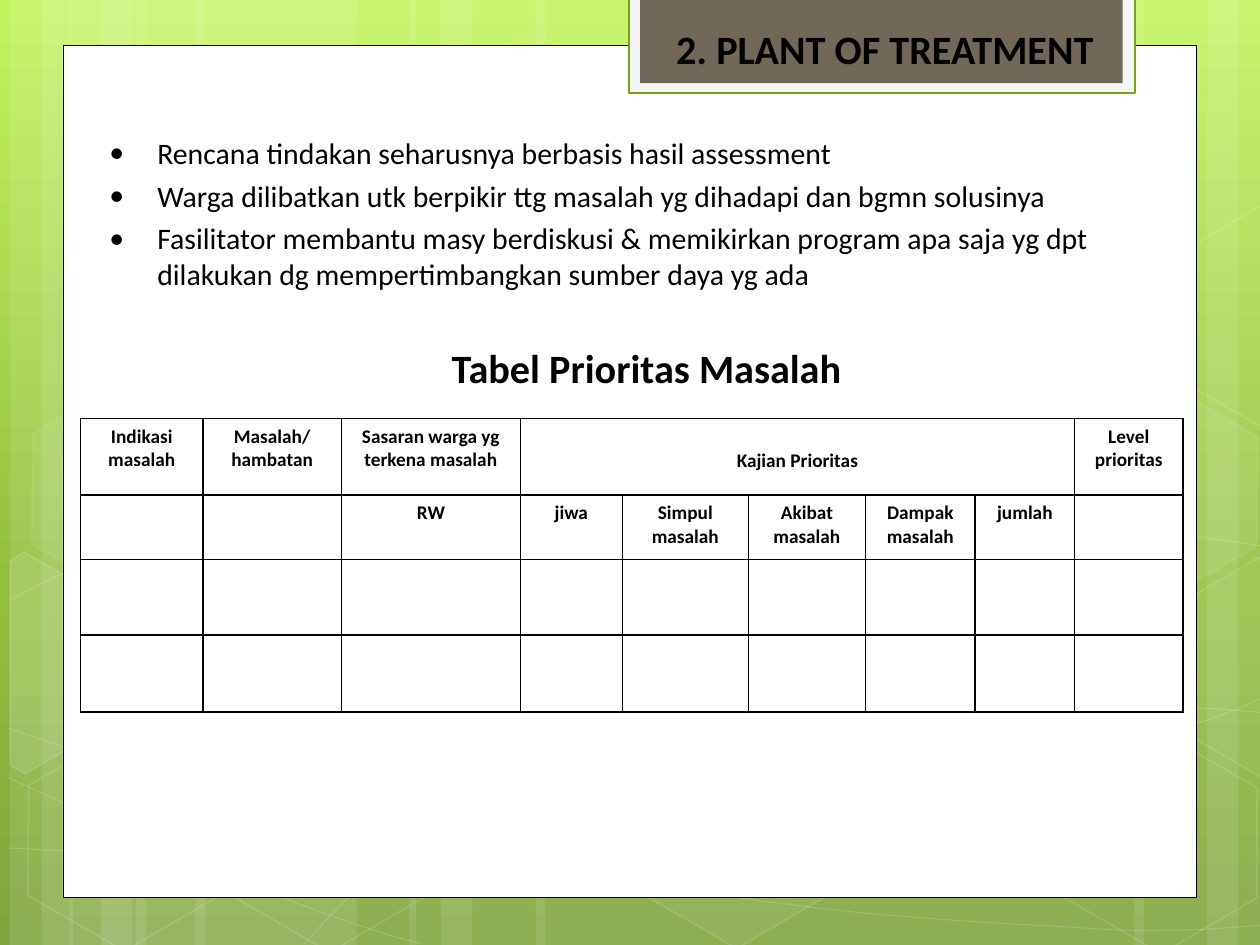
import copy
import math

import pptx
import pptx.dml.color
import pptx.enum.shapes
import pptx.enum.text
import pptx.oxml
import pptx.oxml.ns
import pptx.util
from pptx.util import Inches

RGBColor = pptx.dml.color.RGBColor
SHAPE = pptx.enum.shapes.MSO_SHAPE
CENTER = pptx.enum.text.PP_ALIGN.CENTER
LEFT = pptx.enum.text.PP_ALIGN.LEFT
qn = pptx.oxml.ns.qn

WHITE = RGBColor(0xFF, 0xFF, 0xFF)
BLACK = RGBColor(0x00, 0x00, 0x00)
TAB_BACK = RGBColor(0xF5, 0xF5, 0xF5)
TAB_LINE = RGBColor(0x74, 0xA5, 0x10)
TAB_FILL = RGBColor(0x71, 0x68, 0x5A)
GRADIENT = [(0, RGBColor(0xC3, 0xF3, 0x5F)), (0.62, RGBColor(0x93, 0xBF, 0x3F)),
            (1, RGBColor(0x81, 0xA5, 0x3E))]
TILT = 30


def untilt(point, center):
    """The point before a clockwise turn by TILT about the center."""
    angle = math.radians(TILT)
    dx, dy = point[0] - center[0], point[1] - center[1]
    return (center[0] + dx * math.cos(angle) + dy * math.sin(angle),
            center[1] - dx * math.sin(angle) + dy * math.cos(angle))


class SlideBuilder:
    font = "Calibri"

    def __init__(self, s):
        self.s = s

    def background(self, stops):
        fill = self.s.background.fill
        fill.gradient()
        fill.gradient_angle = 270
        gs_list = self.s.element.find(".//" + qn("a:gsLst"))
        gs_list.insert(1, copy.deepcopy(gs_list[0]))
        for stop, (position, color) in zip(fill.gradient_stops, stops):
            stop.position = position
            stop.color.rgb = color

    def opacity(self, sp, route, percent):
        color = sp.element.spPr.find("/".join(qn(tag) for tag in route))
        color.append(color.makeelement(qn("a:alpha"), {"val": str(percent * 1000)}))

    def paint(self, sp, fill=None, line=None, width=1, fill_alpha=100, line_alpha=100):
        sp.shadow.inherit = False
        if fill is None:
            sp.fill.background()
        else:
            sp.fill.solid()
            sp.fill.fore_color.rgb = fill
            if fill_alpha < 100:
                self.opacity(sp, ("a:solidFill", "a:srgbClr"), fill_alpha)
        if line is None:
            sp.line.fill.background()
        else:
            sp.line.color.rgb = line
            sp.line.width = pptx.util.Pt(width)
            if line_alpha < 100:
                self.opacity(sp, ("a:ln", "a:solidFill", "a:srgbClr"), line_alpha)

    def rect(self, x, y, w, h, **style):
        sp = self.s.shapes.add_shape(SHAPE.RECTANGLE, Inches(x), Inches(y), Inches(w), Inches(h))
        self.paint(sp, **style)

    def hexagon(self, x, y, fill_alpha, line_alpha):
        sp = self.s.shapes.add_shape(SHAPE.HEXAGON, Inches(x), Inches(y),
                                     Inches(1.75), Inches(1.52))
        self.paint(sp, fill=WHITE if fill_alpha else None, fill_alpha=fill_alpha,
                   line=WHITE, line_alpha=line_alpha)
        sp.adjustments[0] = 0.285
        sp.rotation = TILT

    def outline(self, points, close, **style):
        points = [(Inches(x), Inches(y)) for x, y in points]
        builder = self.s.shapes.build_freeform(*points[0])
        builder.add_line_segments(points[1:], close=close)
        sp = builder.convert_to_shape()
        self.paint(sp, line=WHITE, **style)
        return sp

    def cut_hexagon(self, points, center, **style):
        sp = self.outline([untilt(point, center) for point in points], True,
                          line_alpha=12, **style)
        sp.rotation = TILT

    def curve(self, knots):
        sp = self.outline(knots, False, width=0.5, line_alpha=20)
        # Every three line ends become the controls and end of one cubic segment
        lines = list(sp.element.spPr.iter(qn("a:lnTo")))
        for i in range(0, len(lines), 3):
            cubic = lines[i].makeelement(qn("a:cubicBezTo"), {})
            lines[i].addprevious(cubic)
            for line in lines[i:i + 3]:
                cubic.append(line[0])
                line.getparent().remove(line)

    def style_text(self, p, size, bold=False, align=LEFT):
        p.alignment = align
        for r in p.runs:
            r.font.name = self.font
            r.font.size = pptx.util.Pt(size)
            r.font.bold = bold
            r.font.color.rgb = BLACK

    def textbox(self, x, y, w, h):
        sp = self.s.shapes.add_textbox(Inches(x), Inches(y), Inches(w), Inches(h))
        sp.text_frame.word_wrap = True
        return sp.text_frame

    def bullet(self, p):
        pPr = p._p.get_or_add_pPr()
        pPr.set("marL", str(Inches(0.38)))
        pPr.set("indent", str(Inches(-0.38)))
        pPr.append(pPr.makeelement(qn("a:buFont"), {"typeface": self.font}))
        pPr.append(pPr.makeelement(qn("a:buChar"), {"char": "•"}))

    def border(self, cell):
        tcPr = cell._tc.get_or_add_tcPr()
        for side in ("lnL", "lnR", "lnT", "lnB"):
            tcPr.append(pptx.oxml.parse_xml(
                f'<a:{side} {pptx.oxml.ns.nsdecls("a")} w="12700"><a:solidFill>'
                f'<a:srgbClr val="{BLACK}"/></a:solidFill></a:{side}>'))

    def table(self, x, y, widths, heights, texts):
        tbl = self.s.shapes.add_table(len(heights), len(widths), Inches(x), Inches(y),
                                      Inches(sum(widths)), Inches(sum(heights))).table
        tbl.first_row = tbl.horz_banding = False
        for column, width in zip(tbl.columns, widths):
            column.width = Inches(width)
        for row, height in zip(tbl.rows, heights):
            row.height = Inches(height)
        for cell in tbl.iter_cells():
            self.border(cell)
            cell.fill.background()
        for (row, col), text in texts.items():
            tf = tbl.cell(row, col).text_frame
            tf.text = text
            self.style_text(tf.paragraphs[0], 11, True, CENTER)
        return tbl


def main():
    prs = pptx.Presentation()
    prs.slide_width, prs.slide_height = Inches(10), Inches(7.5)
    b = SlideBuilder(prs.slides.add_slide(prs.slide_layouts[6]))

    # Background with translucent vertical bands
    b.background(GRADIENT)
    for x, w in [(1.08, 1.75), (0.08, 0.5), (0.33, 0.83), (1.55, 1.75), (0.55, 0.5),
                 (0.8, 0.83), (7.33, 1.75), (9.58, 0.5), (9, 0.83), (4.25, 3.08),
                 (3.25, 0.5), (3.5, 0.83)]:
        b.rect(x, 0, w, 7.5, fill=WHITE, fill_alpha=10)

    # Sweeping curves: start point, then two controls and an end per segment
    for knots in [
        [(0.07, 6.73), (0.61, 6.76), (1.15, 6.79), (1.9, 6.78), (2.65, 6.77), (3.58, 6.75),
         (4.58, 6.65), (5.58, 6.55), (7, 6.36), (7.92, 6.17), (8.83, 5.98), (9.77, 5.68),
         (10.07, 5.51)],
        [(0.07, 4.77), (0.36, 4.61), (0.65, 4.46), (1.21, 4.31), (1.78, 4.16), (2.59, 3.94),
         (3.47, 3.87), (4.36, 3.8), (5.44, 3.79), (6.54, 3.87), (7.64, 3.95), (9.47, 4.26),
         (10.07, 4.34)],
        [(0.06, 6.17), (1.27, 6.72), (2.47, 7.27), (3.34, 7.49)],
        [(0.07, 5.78), (0.38, 5.89), (0.7, 6), (1.28, 6.16), (1.86, 6.31), (2.73, 6.56),
         (3.57, 6.73), (4.4, 6.9), (5.45, 7.08), (6.28, 7.18), (7.11, 7.29), (8, 7.33),
         (8.53, 7.36), (9.05, 7.4), (9.19, 7.38), (9.45, 7.38), (9.71, 7.37), (9.89, 7.35),
         (10.07, 7.34)],
        [(2.42, 7.49), (2.6, 7.29), (2.78, 7.09), (3.02, 6.91), (3.26, 6.73), (3.6, 6.53),
         (3.88, 6.39), (4.16, 6.25), (4.33, 6.19), (4.7, 6.09), (5.06, 5.99), (5.73, 5.85),
         (6.08, 5.78), (6.44, 5.71), (6.49, 5.71), (6.8, 5.69), (7.11, 5.66), (7.6, 5.63),
         (7.94, 5.62), (8.29, 5.61), (8.86, 5.62), (8.86, 5.62), (8.86, 5.62), (9.53, 5.62),
         (9.53, 5.62), (9.71, 5.63), (9.88, 5.64), (10.06, 5.66)],
    ]:
        b.curve(knots)

    # Hexagons, whole and cut off at the slide edges
    for hexagon in [(3.34, 0.36, 4, 8), (4.97, 5.89, 6, 12)]:
        b.hexagon(*hexagon)
    b.cut_hexagon([(0.08, 4.45), (0.19, 4.38), (0.96, 4.82), (0.95, 5.7), (0.2, 6.14),
                   (0.08, 6.07)], (0.36, 5.35), fill=WHITE, fill_alpha=10)
    for hexagon in [(0.11, 5.91, 0, 12), (0.14, 3.12, 7, 8), (1.74, 5.92, 0, 12),
                    (7.53, 4.53, 10, 12), (8.34, 5.93, 0, 12), (8.34, 3.14, 7, 8)]:
        b.hexagon(*hexagon)
    right_cut = [(9.26, 4.85), (10.01, 4.41), (10.09, 4.46), (10.09, 6.13), (10.02, 6.17),
                 (9.26, 5.73)]
    b.cut_hexagon(right_cut, (9.85, 5.2), fill=WHITE, fill_alpha=4)
    b.cut_hexagon([(x, y - 2.78) for x, y in right_cut], (9.85, 2.42))

    # White page and title tab
    b.rect(0.5, 0.36, 9, 6.76, fill=WHITE, line=BLACK, width=0.5)
    b.rect(4.99, -0.02, 4.02, 0.76, fill=TAB_BACK, line=TAB_LINE, width=1.25)
    b.rect(5.08, -0.02, 3.83, 0.68, fill=TAB_FILL)

    # Bullets and table heading
    tf = b.textbox(0.77, 1.02, 8.73, 2.3)
    tf.text = "\n".join([
        "Rencana tindakan seharusnya berbasis hasil assessment",
        "Warga dilibatkan utk berpikir ttg masalah yg dihadapi dan bgmn solusinya",
        "Fasilitator membantu masy berdiskusi & memikirkan program apa saja yg dpt "
        "dilakukan dg mempertimbangkan sumber daya yg ada",
        "Tabel Prioritas Masalah"])
    *bullets, heading = tf.paragraphs
    for i, p in enumerate(bullets):
        b.bullet(p)
        p.space_before = pptx.util.Pt(4 if i else 0)
        b.style_text(p, 17)
    heading.space_before = pptx.util.Pt(29.5)
    b.style_text(heading, 23, True, CENTER)

    # Priority table
    header = {0: "Indikasi masalah", 1: "Masalah/hambatan", 2: "Sasaran warga yg terkena masalah",
              3: "Kajian Prioritas", 8: "Level prioritas"}
    subheader = ["RW", "jiwa", "Simpul masalah", "Akibat masalah", "Dampak masalah", "jumlah"]
    texts = {(0, col): text for col, text in header.items()}
    texts.update({(1, col): text for col, text in enumerate(subheader, 2)})
    tbl = b.table(0.64, 3.32, [0.97, 1.1, 1.42, 0.81, 1, 0.93, 0.87, 0.79, 0.86],
                  [0.61, 0.51, 0.6, 0.61], texts)
    tbl.cell(0, 3).merge(tbl.cell(0, 7))
    tbl.cell(0, 3).margin_top = Inches(0.24)

    # Title
    tf = b.textbox(5, 0.14, 4.05, 0.49)
    tf.text = "2. PLANT OF TREATMENT"
    b.style_text(tf.paragraphs[0], 23, True, CENTER)

    prs.save("out.pptx")


if __name__ == "__main__":
    main()
